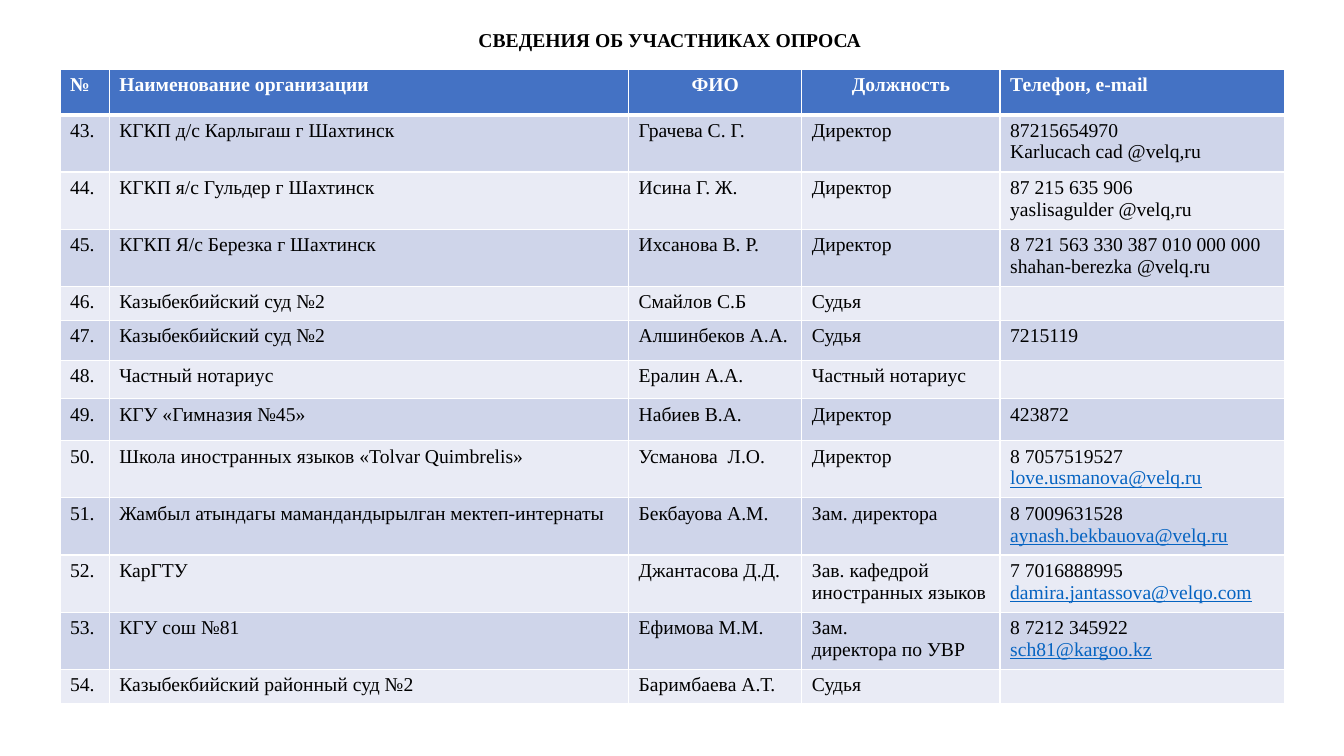
"""Build a slide with a table of survey participants."""
from lxml.etree import SubElement
from pptx import Presentation
from pptx.dml.color import RGBColor
from pptx.enum.text import PP_ALIGN
from pptx.oxml.ns import qn
from pptx.util import Pt

COLORS = {
    "header": "4472C4",
    "odd": "CFD5EA",
    "even": "E9EBF5",
    "text": "000000",
    "white": "FFFFFF",
    "link": "0563C1",
}
BODY = {"name": "Times New Roman", "size": Pt(14), "bold": False}
BOLD = {**BODY, "bold": True}
LINK = {**BODY, "underline": True}

TITLE = "СВЕДЕНИЯ ОБ УЧАСТНИКАХ ОПРОСА"
HEADERS = ["№", "Наименование организации", "ФИО", "Должность", "Телефон, e-mail"]
CENTERED_HEADERS = {"ФИО", "Должность"}
FIRST_NUMBER = 43
PARTICIPANTS = [
    ("КГКП д/с Карлыгаш г Шахтинск", "Грачева С. Г.", "Директор",
     "87215654970\nKarlucach cad @velq,ru"),
    ("КГКП я/с Гульдер г Шахтинск", "Исина Г. Ж.", "Директор",
     "87 215 635 906\nyaslisagulder @velq,ru"),
    ("КГКП Я/с Березка г Шахтинск", "Ихсанова В. Р.", "Директор",
     "8 721 563 330 387 010 000 000\nshahan-berezka @velq.ru"),
    ("Казыбекбийский суд №2", "Смайлов С.Б", "Судья", ""),
    ("Казыбекбийский суд №2", "Алшинбеков А.А.", "Судья", "7215119"),
    ("Частный нотариус", "Ералин А.А.", "Частный нотариус", ""),
    ("КГУ «Гимназия №45»", "Набиев В.А.", "Директор", "423872"),
    ("Школа иностранных языков «Tolvar Quimbrelis»", "Усманова  Л.О.", "Директор",
     "8 7057519527\nlove.usmanova@velq.ru"),
    ("Жамбыл атындагы мамандандырылган мектеп-интернаты", "Бекбауова А.М.",
     "Зам. директора", "8 7009631528\naynash.bekbauova@velq.ru"),
    ("КарГТУ", "Джантасова Д.Д.", "Зав. кафедрой иностранных языков",
     "7 7016888995\ndamira.jantassova@velqo.com"),
    ("КГУ сош №81", "Ефимова М.М.", "Зам.\nдиректора по УВР",
     "8 7212 345922\nsch81@kargoo.kz"),
    ("Казыбекбийский районный суд №2", "Баримбаева А.Т.", "Судья", ""),
]

COLUMN_WIDTHS = [35.2, 371, 123.8, 141.6, 203.2]
TALL_ROW = 40.8
ROW_HEIGHTS = [32.4, *[TALL_ROW] * 3, 24.1, 28.6, 27.6, 30, *[TALL_ROW] * 4, 24]


def write_paragraph(paragraph, text, color, font_format, alignment=PP_ALIGN.LEFT):
    """Write one formatted run into a paragraph."""
    paragraph.alignment = alignment
    run = paragraph.add_run()
    run.text = text
    for name, value in font_format.items():
        setattr(run.font, name, value)
    run.font.color.rgb = RGBColor.from_string(COLORS[color])


def add_title(slide):
    """Add the centred slide heading."""
    box = slide.shapes.add_textbox(Pt(16.6), Pt(16.6), Pt(923.8), Pt(211))
    box.text_frame.word_wrap = True
    write_paragraph(box.text_frame.paragraphs[0], TITLE, "text", BOLD, PP_ALIGN.CENTER)


def style_cell(cell, fill, top=1, bottom=1):
    """Give a cell white borders and a solid fill."""
    properties = cell._tc.get_or_add_tcPr()
    for side, width in {"L": 1, "R": 1, "T": top, "B": bottom}.items():
        line = SubElement(properties, qn(f"a:ln{side}"), w=str(Pt(width)))
        solid = SubElement(line, qn("a:solidFill"))
        SubElement(solid, qn("a:srgbClr"), val=COLORS["white"])
    cell.fill.solid()
    cell.fill.fore_color.rgb = RGBColor.from_string(COLORS[fill])


def fill_header(cell, text):
    """Fill one header cell."""
    style_cell(cell, "header", bottom=3)
    alignment = PP_ALIGN.CENTER if text in CENTERED_HEADERS else PP_ALIGN.LEFT
    write_paragraph(cell.text_frame.paragraphs[0], text, "white", BOLD, alignment)


def fill_body(cell, text, row_index):
    """Fill one body cell, with a paragraph for each line."""
    style_cell(cell, "odd" if row_index % 2 else "even", top=3 if row_index == 1 else 1)
    frame = cell.text_frame
    if not text:
        frame.paragraphs[0].font.size = BODY["size"]
        return
    for index, line in enumerate(text.split("\n")):
        paragraph = frame.add_paragraph() if index else frame.paragraphs[0]
        is_link = "@" in line and " " not in line
        color, font_format = ("link", LINK) if is_link else ("text", BODY)
        write_paragraph(paragraph, line, color, font_format)


def add_participants_table(slide):
    """Add the table with one row per participant."""
    table = slide.shapes.add_table(
        len(ROW_HEIGHTS), len(COLUMN_WIDTHS), Pt(42.8), Pt(49.6),
        Pt(sum(COLUMN_WIDTHS)), Pt(sum(ROW_HEIGHTS))).table
    for column, width in zip(table.columns, COLUMN_WIDTHS):
        column.width = Pt(width)
    for row, height in zip(table.rows, ROW_HEIGHTS):
        row.height = Pt(height)
    for column_index, text in enumerate(HEADERS):
        fill_header(table.cell(0, column_index), text)
    for row_index, participant in enumerate(PARTICIPANTS, start=1):
        number = f"{FIRST_NUMBER + row_index - 1}."
        for column_index, text in enumerate((number, *participant)):
            fill_body(table.cell(row_index, column_index), text, row_index)


def main():
    """Create and save the presentation."""
    presentation = Presentation()
    presentation.slide_width = Pt(960)
    presentation.slide_height = Pt(540)
    slide = presentation.slides.add_slide(presentation.slide_layouts[6])
    add_title(slide)
    add_participants_table(slide)
    presentation.save("out.pptx")


if __name__ == "__main__":
    main()
